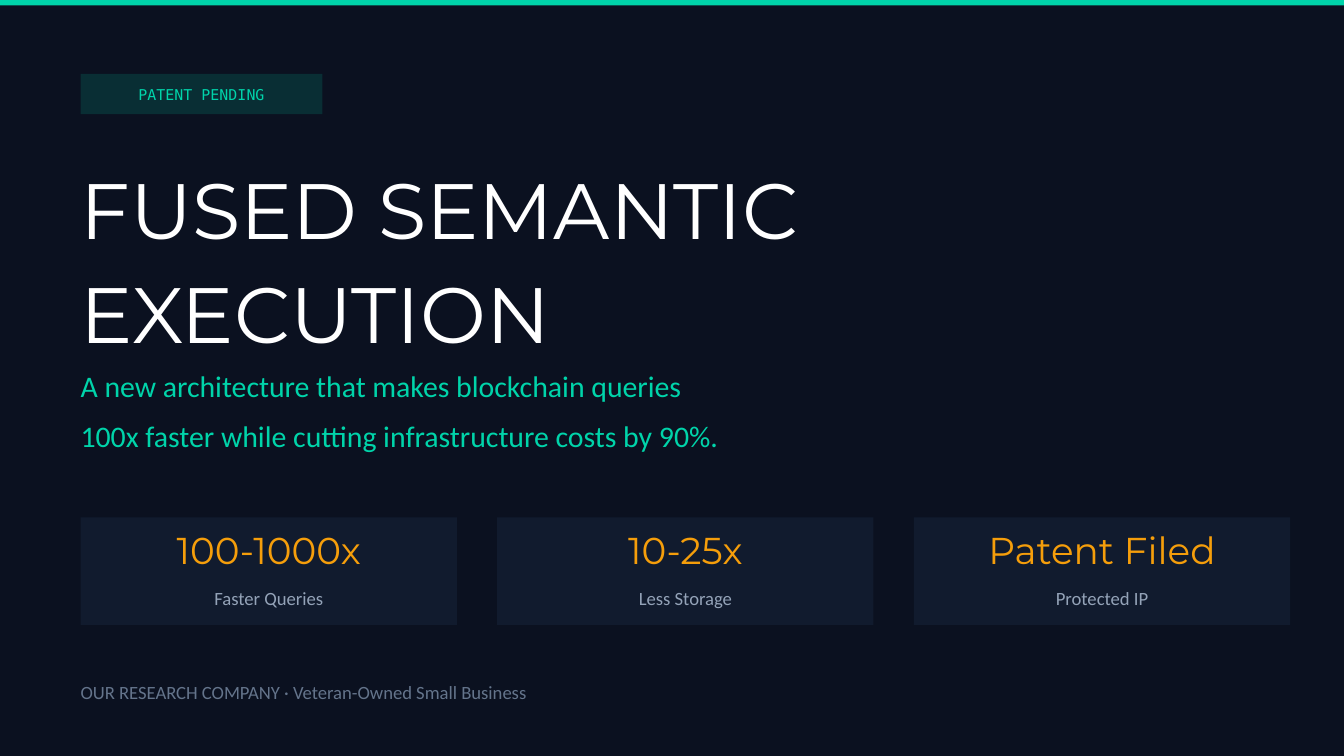
from pptx import Presentation
from pptx.dml.color import RGBColor
from pptx.enum.shapes import MSO_SHAPE as Shape
from pptx.enum.text import MSO_ANCHOR as Anchor, PP_ALIGN as Align
from pptx.oxml.ns import qn
from pptx.util import Pt
from lxml import etree

NIGHT = RGBColor(0x0B, 0x11, 0x20)
PANEL = RGBColor(0x11, 0x1B, 0x2E)
TEAL = RGBColor(0x00, 0xD4, 0xAA)
AMBER = RGBColor(0xF5, 0x9E, 0x0B)
WHITE = RGBColor(0xFF, 0xFF, 0xFF)
SILVER = RGBColor(0x94, 0xA3, 0xB8)
SLATE = RGBColor(0x64, 0x74, 0x8B)

WIDTH, HEIGHT = 720, 405
MARGIN = 43.2
CONTENT_WIDTH = WIDTH - 2 * MARGIN
CARD_GAP = 21.6

BADGE = {"name": "DejaVu Sans Mono", "size": Pt(8), "color": TEAL}
TITLE = {"name": "Montserrat", "size": Pt(42), "color": WHITE}
SUBTITLE = {"name": "Calibri", "size": Pt(16), "color": TEAL}
FIGURE = {"name": "Montserrat", "size": Pt(20), "color": AMBER}
CAPTION = {"name": "Calibri", "size": Pt(10), "color": SILVER}
FOOTER = {"name": "Calibri", "size": Pt(10), "color": SLATE}

METRICS = [
    ("100-1000x", "Faster Queries"),
    ("10-25x", "Less Storage"),
    ("Patent Filed", "Protected IP"),
]


def add_panel(slide, box, color, opacity=100):
    """Draw a borderless rectangle, optionally see-through."""
    shape = slide.shapes.add_shape(Shape.RECTANGLE, *map(Pt, box))
    shape.shadow.inherit = False
    shape.fill.solid()
    shape.fill.fore_color.rgb = color
    shape.line.fill.background()
    if opacity < 100:
        color_element = shape.fill._xPr.find(".//" + qn("a:srgbClr"))
        alpha = etree.SubElement(color_element, qn("a:alpha"))
        alpha.set("val", str(opacity * 1000))


def add_text(slide, box, lines, style, align=Align.LEFT, spacing=None):
    """Place one paragraph per line, centred vertically in the box."""
    frame = slide.shapes.add_textbox(*map(Pt, box)).text_frame
    settings = {"word_wrap": True, "vertical_anchor": Anchor.MIDDLE}
    settings.update({f"margin_{side}": 0 for side in ("left", "top", "right", "bottom")})
    for key, value in settings.items():
        setattr(frame, key, value)
    frame.text = "\n".join(lines)
    for paragraph in frame.paragraphs:
        paragraph.alignment = align
        paragraph.line_spacing = spacing
        for key, value in style.items():
            if key == "color":
                paragraph.font.color.rgb = value
            else:
                setattr(paragraph.font, key, value)


def add_badge(slide, box, label):
    """Place a tinted label."""
    add_panel(slide, box, TEAL, opacity=15)
    add_text(slide, box, [label], BADGE, Align.CENTER)


def add_heading(slide, box):
    """Place the title with the subtitle below it."""
    left, top, width, _ = box
    add_text(slide, (left, top, width, 86.4),
             ["FUSED SEMANTIC", "EXECUTION"], TITLE, spacing=1.1)
    add_text(slide, (left, top + 93.6, 468, 57.6),
             ["A new architecture that makes blockchain queries",
              "100x faster while cutting infrastructure costs by 90%."],
             SUBTITLE, spacing=1.4)


def add_card(slide, box, figure, caption):
    """Place a metric card with its figure and caption."""
    left, top, width, _ = box
    add_panel(slide, box, PANEL)
    add_text(slide, (left, top + 2.16, width, 30.24), [figure], FIGURE, Align.CENTER)
    add_text(slide, (left, top + 32.4, width, 21.6), [caption], CAPTION, Align.CENTER)


def add_metrics(slide, box):
    """Share the row equally between the metric cards."""
    left, top, width, height = box
    card_width = (width + CARD_GAP) / len(METRICS) - CARD_GAP
    for index, (figure, caption) in enumerate(METRICS):
        card_left = left + index * (card_width + CARD_GAP)
        add_card(slide, (card_left, top, card_width, height), figure, caption)


def build_cover(presentation):
    """Build the cover slide from its regions."""
    slide = presentation.slides.add_slide(presentation.slide_layouts[6])
    slide.background.fill.solid()
    slide.background.fill.fore_color.rgb = NIGHT
    add_panel(slide, (0, 0, WIDTH, 2.88), TEAL)
    add_badge(slide, (MARGIN, 39.6, 129.6, 21.6), "PATENT PENDING")
    add_heading(slide, (MARGIN, 93.6, CONTENT_WIDTH, 151.2))
    add_metrics(slide, (MARGIN, 277.2, WIDTH - MARGIN - 28.8, 57.6))
    add_text(slide, (MARGIN, 360, CONTENT_WIDTH, 21.6),
             ["OUR RESEARCH COMPANY · Veteran-Owned Small Business"], FOOTER)


def main():
    """Create and save the presentation."""
    presentation = Presentation()
    presentation.slide_width, presentation.slide_height = Pt(WIDTH), Pt(HEIGHT)
    build_cover(presentation)
    presentation.save("out.pptx")


if __name__ == "__main__":
    main()
